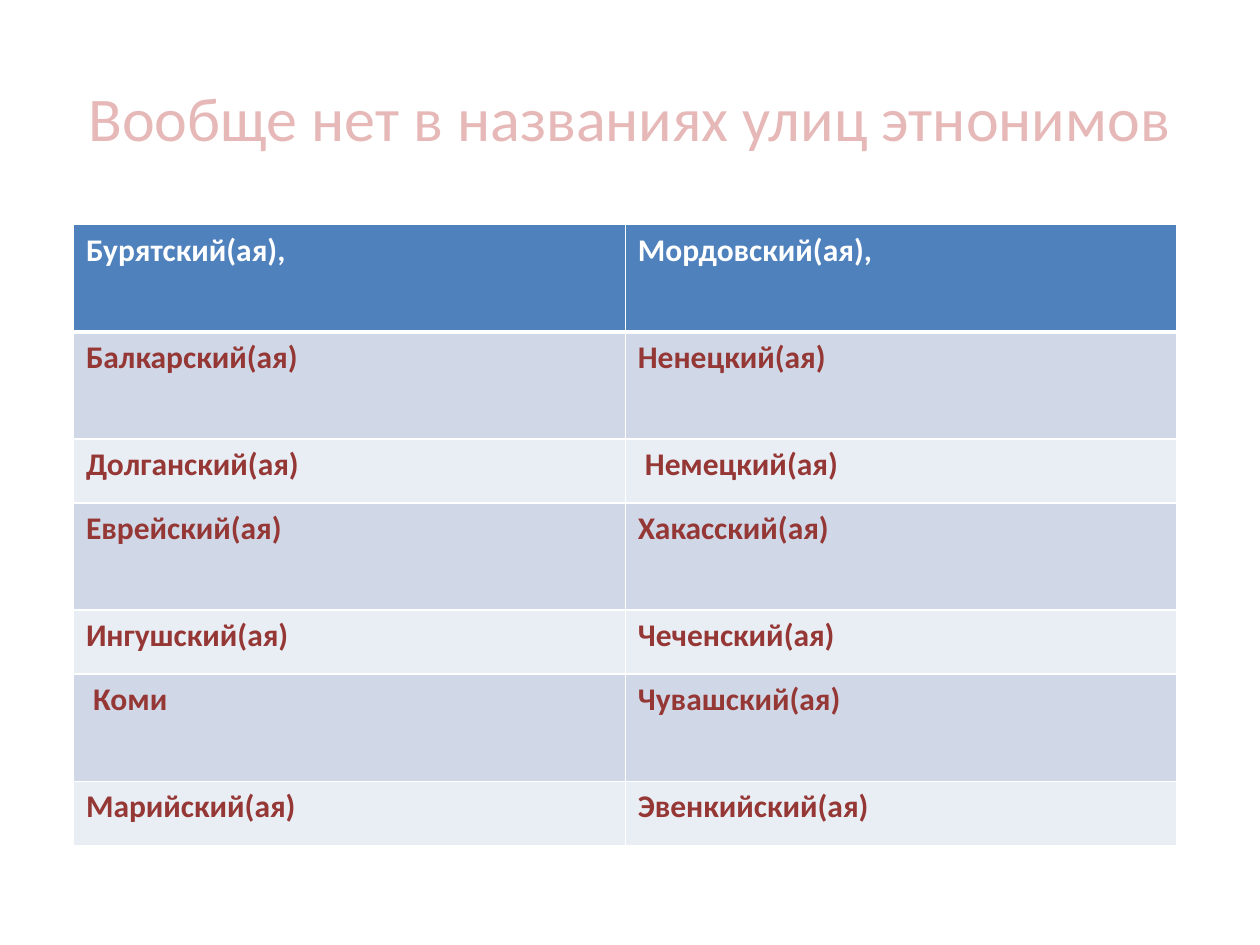
from lxml.etree import SubElement
from pptx import Presentation
from pptx.dml.color import RGBColor as RGB
from pptx.enum.text import MSO_ANCHOR as Anchor, MSO_AUTO_SIZE as AutoSize, PP_ALIGN as Align
from pptx.oxml.ns import qn
from pptx.util import Cm, Pt

WHITE = RGB(0xFF, 0xFF, 0xFF)
PINK = RGB(0xE6, 0xB9, 0xB8)
RED = RGB(0xC0, 0x50, 0x4D)
DARK_RED = RGB(0x95, 0x37, 0x35)
BLUE = RGB(0x4F, 0x81, 0xBD)
BANDS = (RGB(0xE9, 0xED, 0xF4), RGB(0xD0, 0xD8, 0xE8))

TITLE = "Вообще нет в названиях улиц этнонимов"
ETHNONYMS = [
    ("Бурятский(ая),", "Мордовский(ая),"),
    ("Балкарский(ая)", "Ненецкий(ая)"),
    ("Долганский(ая)", " Немецкий(ая)"),
    ("Еврейский(ая)", "Хакасский(ая)"),
    ("Ингушский(ая)", "Чеченский(ая)"),
    (" Коми", "Чувашский(ая)"),
    ("Марийский(ая)", "Эвенкийский(ая)"),
]
TALL, SHORT = Cm(2.16), Cm(1.29)


def add_line(parent, tag, color, width):
    ln = SubElement(parent, qn(tag), w=str(Pt(width)))
    SubElement(SubElement(ln, qn("a:solidFill")), qn("a:srgbClr"), val=str(color))
    return ln


class SlideBuilder:
    font = "Calibri"

    def __init__(self, slide):
        self.slide = slide

    def set_font(self, font, size, color, bold=False):
        font.name, font.size, font.bold = self.font, Pt(size), bold
        font.color.rgb = color

    def title(self, text, left, top, width, height):
        sp = self.slide.shapes.title
        sp.left, sp.top, sp.width, sp.height = left, top, width, height
        tf = sp.text_frame
        tf.word_wrap, tf.auto_size = True, AutoSize.NONE
        tf.vertical_anchor = Anchor.MIDDLE
        p = tf.paragraphs[0]
        p.alignment = Align.CENTER
        r = p.add_run()
        r.text = text
        self.set_font(r.font, 35.5, PINK)
        # The text outline goes ahead of the fill
        rpr = r.font._element
        rpr.insert(0, add_line(rpr, "a:ln", RED, 1.75))

    def cell(self, cell, text, row):
        # Borders: a thick rule parts the header from the body
        tcpr = cell._tc.get_or_add_tcPr()
        widths = {"L": 1, "R": 1, "T": 3 if row == 1 else 1, "B": 3 if row == 0 else 1}
        for side, width in widths.items():
            add_line(tcpr, f"a:ln{side}", WHITE, width)
        cell.fill.solid()
        cell.fill.fore_color.rgb = BANDS[row % 2] if row else BLUE
        cell.text = text
        p = cell.text_frame.paragraphs[0]
        self.set_font(p.font, 18, DARK_RED if row else WHITE, bold=True)

    def table(self, rows, left, top, width, heights):
        frame = self.slide.shapes.add_table(
            len(rows), len(rows[0]), left, top, width, sum(heights))
        table = frame.table
        for i, (texts, height) in enumerate(zip(rows, heights)):
            table.rows[i].height = height
            for j, text in enumerate(texts):
                self.cell(table.cell(i, j), text, i)


def main():
    prs = Presentation()
    prs.slide_width, prs.slide_height = Cm(25.4), Cm(19.05)
    builder = SlideBuilder(prs.slides.add_slide(prs.slide_layouts[5]))

    # Heading
    builder.title(TITLE, Cm(1.27), Cm(0.76), Cm(22.86), Cm(3.18))

    # Ethnonyms: the header and odd body rows are tall
    heights = [TALL if i == 0 or i % 2 else SHORT for i in range(len(ETHNONYMS))]
    builder.table(ETHNONYMS, Cm(1.48), Cm(4.53), Cm(22.25), heights)

    prs.save("out.pptx")


if __name__ == "__main__":
    main()
